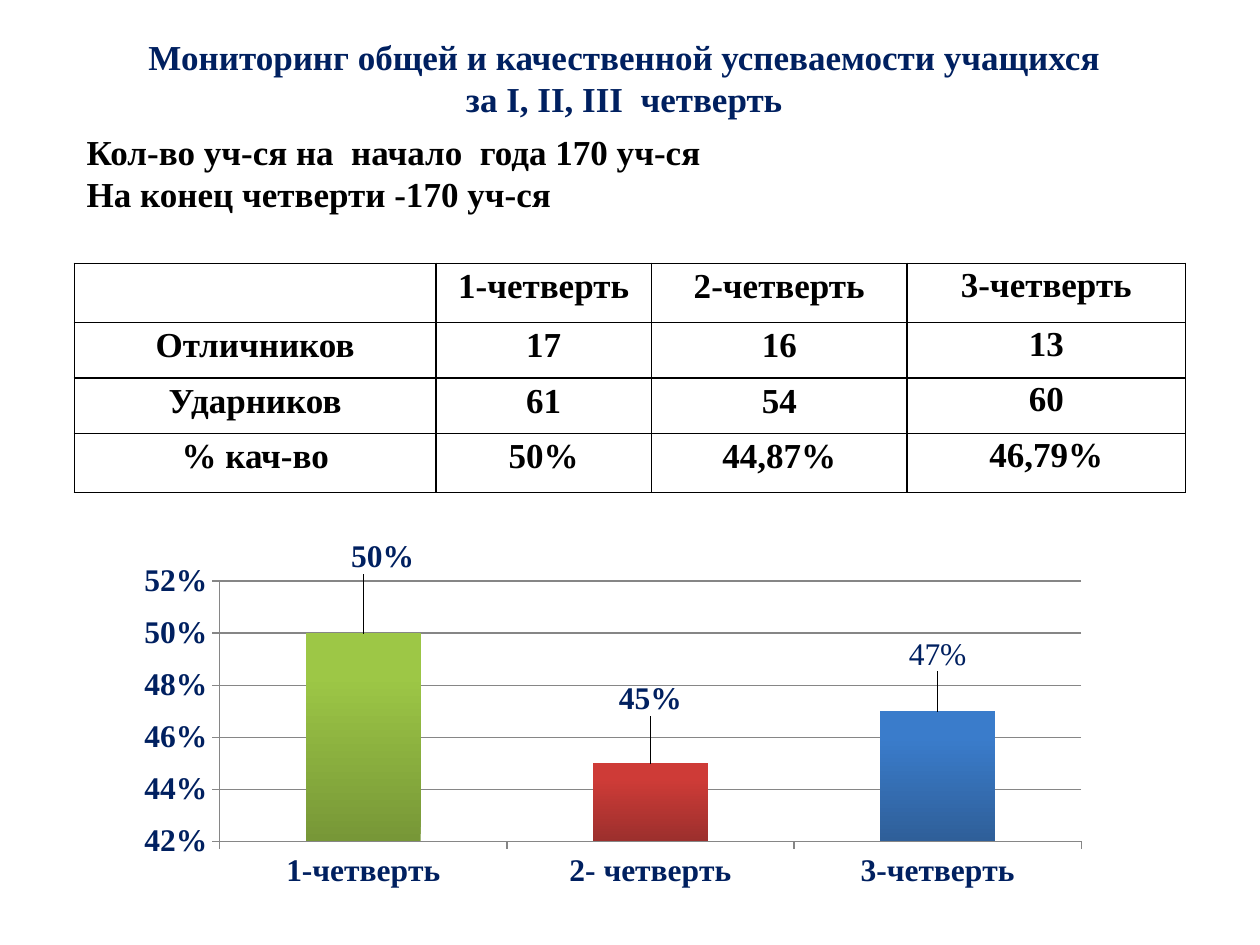
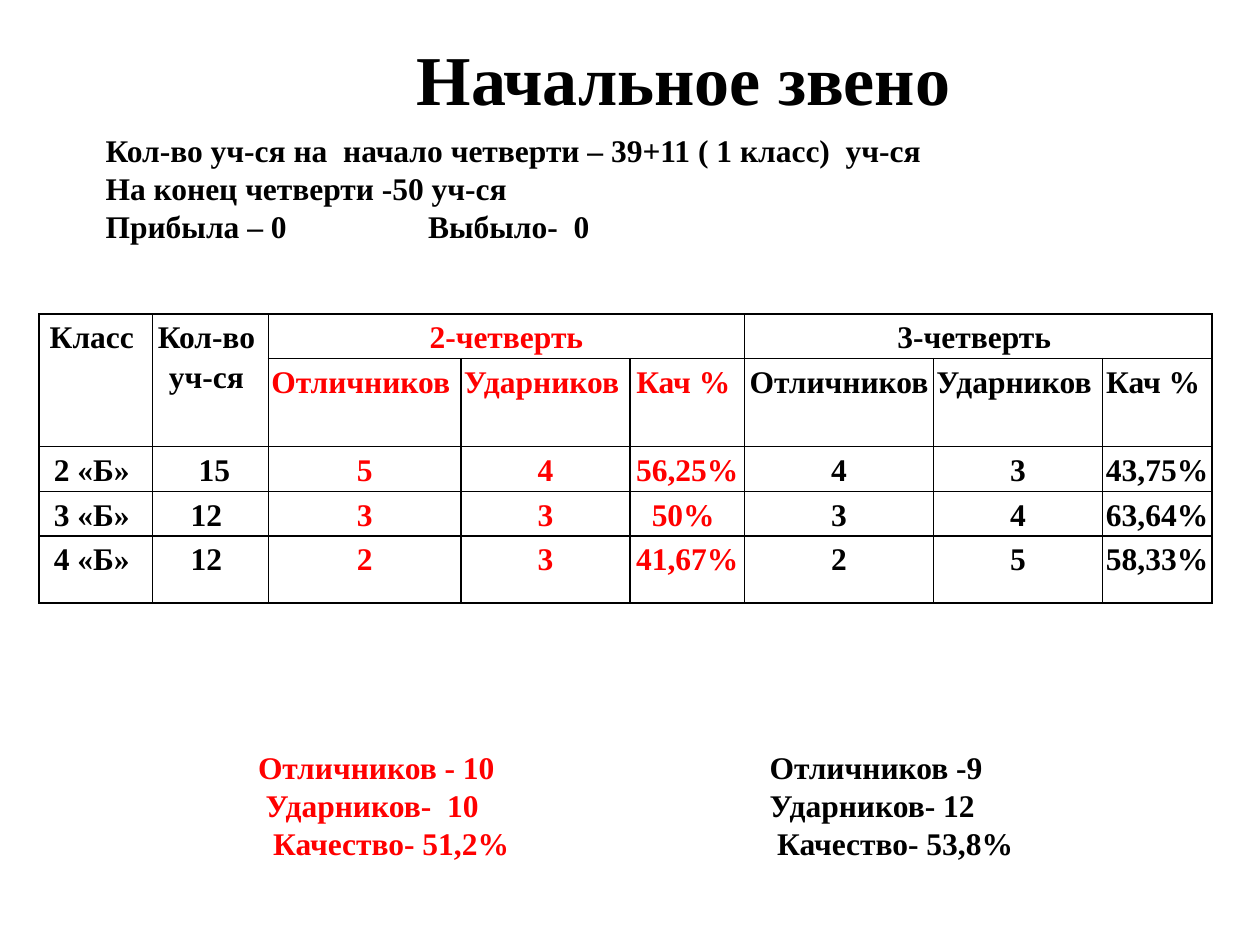
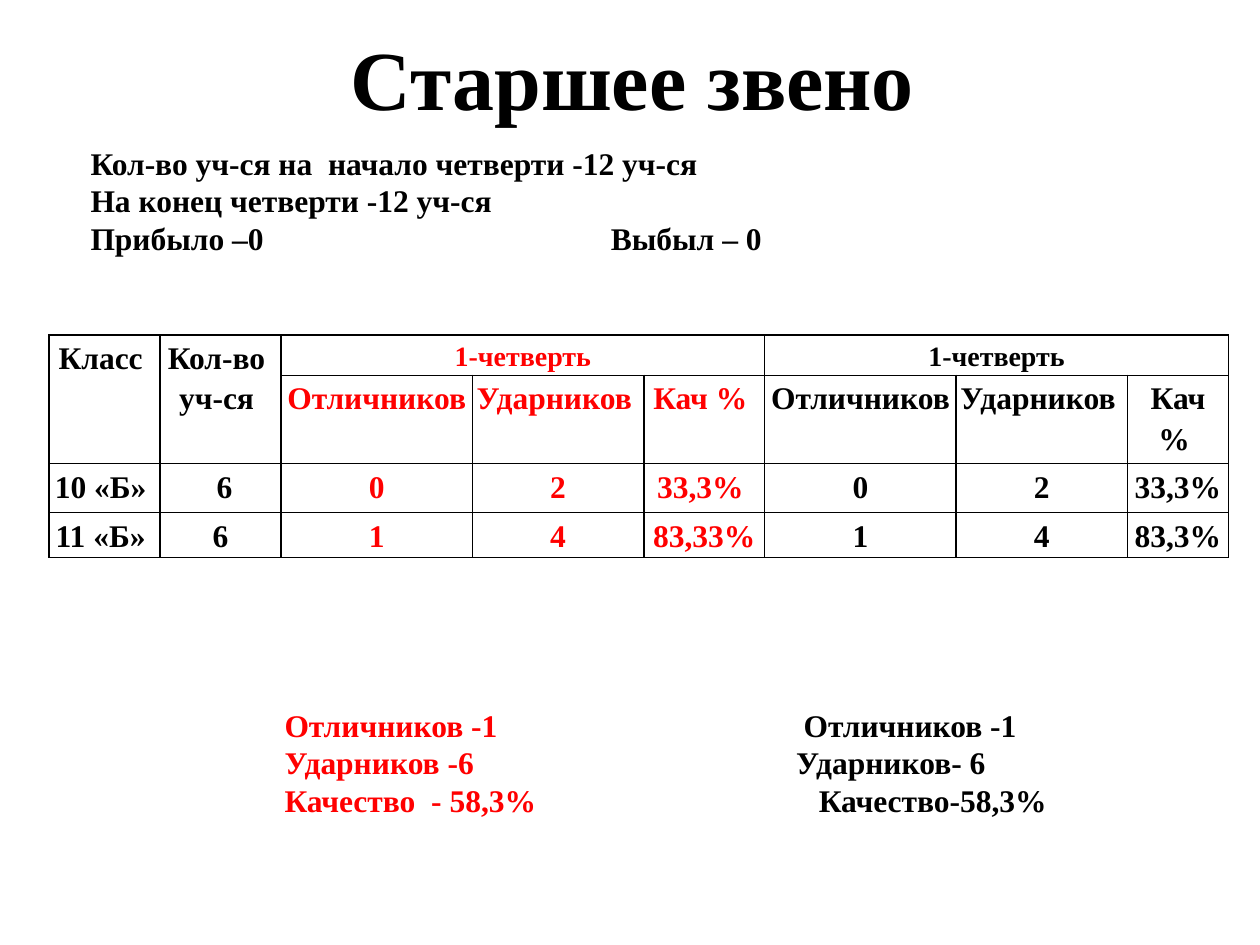
from dataclasses import dataclass

from lxml import etree
from pptx import Presentation
from pptx.chart.data import CategoryChartData
from pptx.dml.color import RGBColor
from pptx.enum.chart import XL_CHART_TYPE, XL_LABEL_POSITION, XL_TICK_MARK
from pptx.enum.text import PP_ALIGN
from pptx.oxml import parse_xml
from pptx.oxml.ns import nsdecls, qn
from pptx.util import Inches, Pt

CENTER, LEFT = PP_ALIGN.CENTER, PP_ALIGN.LEFT
COLUMNS = XL_CHART_TYPE.COLUMN_CLUSTERED
OUTSIDE_END = XL_LABEL_POSITION.OUTSIDE_END
TICK_OUTSIDE = XL_TICK_MARK.OUTSIDE


@dataclass(frozen=True)
class Theme:
    font: str = "Times New Roman"
    ink: str = "000000"
    navy: str = "002060"
    red: str = "FF0000"
    axis: str = "868686"
    small: int = 16
    body: int = 18
    large: int = 20


THEME = Theme()

# Content: monitoring slide
MONITORING = {
    "title": "Мониторинг общей и качественной успеваемости учащихся за Ӏ, II, III  четверть",
    "intro": ["Кол-во уч-ся на  начало  года 170 уч-ся",
              "На конец четверти -170 уч-ся"],
    "rows": [["", "1-четверть", "2-четверть", "3-четверть"],
             ["Отличников", "17", "16", "13"],
             ["Ударников", "61", "54", "60"],
             ["% кач-во", "50%", "44,87%", "46,79%"]],
}
# Quarter, quality, dark and light bar colours, label shift, bold label
QUALITY = [
    ("1-четверть", 0.50, "779737", "9DC746", (0.02, -0.14), True),
    ("2- четверть", 0.45, "9C2F2D", "CE3B37", (0, -0.11), True),
    ("3-четверть", 0.47, "2F5F99", "3A7CCB", (0, -0.09), False),
]

# Content: one slide for each school stage
# A tab in a line goes to the next of that line's tab stops (inches).
MEASURES = ["Отличников ", "Ударников ", "Кач % "]
STAGES = [
    {
        "title": "Начальное звено", "title_size": 40,
        "title_box": (1.56, 0.23, 7.73, 0.77),
        "intro_box": (0.74, 0.99, 8.67, 1.31),
        "intro": ["Кол-во уч-ся на  начало четверти – 39+11 ( 1 класс)  уч-ся",
                  "На конец четверти -50 уч-ся",
                  "Прибыла – 0\tВыбыло-  0"],
        "intro_stop": 2.56,
        "quarters": ("2-четверть", "3-четверть "), "quarter_size": THEME.body,
        "classes": [
            ["2 «Б» ", " 15", "5", "4", "56,25% ", "4", "3", "43,75% "],
            ["3 «Б» ", "12 ", "3", "3", "50% ", "3", "4", "63,64% "],
            ["4 «Б» ", "12 ", "2", "3", "41,67% ", "2", "5", "58,33% "]],
        "table_at": (0.31, 2.49), "inset": 0.02,
        "widths": [0.9, 0.92, 1.53, 1.34, 0.91, 1.5, 1.34, 0.87],
        "heights": [0.35, 0.7, 0.35, 0.35, 0.53],
        "totals_box": (0.57, 5.89, 9.06, 1.31),
        "totals": [("Отличников - 10", 1.38, "Отличников -9", 5.44),
                   ("Ударников-  10", 1.44, "Ударников- 12", 5.44),
                   ("Качество- 51,2%", 1.5, "Качество- 53,8%", 5.5)],
    },
    {
        "title": "Старшее звено", "title_size": 48,
        "title_box": (2.66, 0.16, 4.72, 0.91),
        "intro_box": (0.62, 1.09, 7.89, 1.31),
        "intro": ["Кол-во уч-ся на  начало четверти -12 уч-ся",
                  "На конец четверти -12 уч-ся",
                  "Прибыло –0\tВыбыл – 0"],
        "intro_stop": 4.13,
        "quarters": ("1-четверть", "1-четверть"), "quarter_size": THEME.small,
        "classes": [
            ["10 «Б» ", " 6", "0", "2", "33,3% ", "0", "2", "33,3% "],
            ["11 «Б» ", "6", "1", "4", "83,33%", "1", "4", "83,3%"]],
        "table_at": (0.39, 2.66), "inset": 0.03,
        "widths": [0.88, 0.96, 1.52, 1.36, 0.96, 1.52, 1.36, 0.8],
        "heights": [0.32, 0.7, 0.39, 0.35],
        "totals_box": (1.09, 5.55, 8.44, 1.31),
        "totals": [("Отличников -1", 1.07, "Отличников -1", 5.19),
                   ("Ударников -6", 1.07, "Ударников- 6", 5.13),
                   ("Качество  - 58,3%", 1.07, "Качество-58,3%", 5.31)],
    },
]


# Text helpers
def style_font(font, size, color, bold=True):
    font.name, font.size, font.bold = THEME.font, Pt(size), bold
    font.color.rgb = RGBColor.from_string(color)


def add_runs(paragraph, runs, size, align=LEFT, stops=()):
    """Fill a paragraph with (text, colour) runs and set its tab stops."""
    paragraph.alignment = align
    for text, color in runs:
        run = paragraph.add_run()
        run.text = text
        style_font(run.font, size, color)
    if stops:
        tabs = etree.SubElement(paragraph._p.get_or_add_pPr(), qn("a:tabLst"))
        for stop in stops:
            etree.SubElement(tabs, qn("a:tab"), pos=str(Inches(stop)), algn="l")


def add_text(slide, box, lines, size, align=LEFT):
    """Add a text box; each line is a pair of runs and tab stops."""
    frame = slide.shapes.add_textbox(*map(Inches, box)).text_frame
    frame.word_wrap = True
    for i, (runs, stops) in enumerate(lines):
        paragraph = frame.add_paragraph() if i else frame.paragraphs[0]
        add_runs(paragraph, runs, size, align, stops)


def plain(lines, color=THEME.ink, stop=None):
    return [([(line, color)], [stop] if "\t" in line else []) for line in lines]


# Table helpers
def add_grid(slide, at, widths, heights):
    """Add an unfilled table with thin black borders on every cell."""
    table = slide.shapes.add_table(
        len(heights), len(widths), *map(Inches, (*at, sum(widths), sum(heights)))).table
    table.first_row = table.horz_banding = False
    for column, width in zip(table.columns, widths):
        column.width = Inches(width)
    for row, height in zip(table.rows, heights):
        row.height = Inches(height)
        for cell in row.cells:
            cell.fill.background()
            properties = cell._tc.get_or_add_tcPr()
            for i, side in enumerate(("lnL", "lnR", "lnT", "lnB")):
                properties.insert(i, parse_xml(
                    f'<a:{side} {nsdecls("a")} w="{Pt(1)}"><a:solidFill>'
                    f'<a:srgbClr val="{THEME.ink}"/></a:solidFill></a:{side}>'))
    return table


def fill_cell(cell, text, size, inset, spacing, color=THEME.ink, after=0, top=0.01):
    cell.margin_left = cell.margin_right = Inches(inset)
    cell.margin_top, cell.margin_bottom = Inches(top), 0
    for i, line in enumerate(text.split("\n") if text else []):
        paragraph = cell.text_frame.add_paragraph() if i else cell.text_frame.paragraphs[0]
        paragraph.line_spacing, paragraph.space_after = spacing, Pt(after)
        add_runs(paragraph, [(line, color)], size, CENTER)


# Chart
def manual_layout(**values):
    parts = "".join(f'<c:{tag} val="{value}"/>' for tag, value in values.items())
    return parse_xml(f'<c:layout {nsdecls("c")}><c:manualLayout>{parts}'
                     '</c:manualLayout></c:layout>')


def add_quality_chart(slide, box):
    data = CategoryChartData(number_format="0%")
    data.categories = [quarter[0] for quarter in QUALITY]
    data.add_series("Series 1", [quarter[1] for quarter in QUALITY])
    chart = slide.shapes.add_chart(COLUMNS, *map(Inches, box), data).chart
    chart.has_legend = chart.has_title = False
    style_font(chart.font, THEME.body, THEME.navy)

    values = chart.value_axis
    values.minimum_scale, values.maximum_scale, values.major_unit = 0.42, 0.52, 0.02
    values.tick_labels.number_format = "0%"
    values.tick_labels.number_format_is_linked = False
    values.has_major_gridlines = True
    for axis in (values, chart.category_axis):
        axis.major_tick_mark = TICK_OUTSIDE
        style_font(axis.tick_labels.font, THEME.body, THEME.navy)
    for line in (values.format.line, chart.category_axis.format.line,
                 values.major_gridlines.format.line):
        line.color.rgb = RGBColor.from_string(THEME.axis)
        line.width = Pt(0.75)

    plot = chart.plots[0]
    plot.gap_width, plot.vary_by_categories = 150, False
    plot.has_data_labels = True
    plot.data_labels.show_value = True
    plot.data_labels.number_format = "0%"
    plot.data_labels.number_format_is_linked = False
    for i, (_, _, dark, light, _, bold) in enumerate(QUALITY):
        point = plot.series[0].points[i]
        fill = point.format.fill
        fill.gradient()
        fill.gradient_angle = 90
        for stop, color, position in zip(fill.gradient_stops, (dark, light), (0, 0.8)):
            stop.color.rgb = RGBColor.from_string(color)
            stop.position = position
        style_font(point.data_label.font, THEME.body, THEME.navy, bold)
        point.data_label.position = OUTSIDE_END

    # Plot area and label places
    for label, quarter in zip(chart.element.iter(qn("c:dLbl")), QUALITY):
        x, y = quarter[4]
        label.insert(1, manual_layout(x=x, y=y))
    plot_area = next(chart.element.iter(qn("c:plotArea")))
    for layout in plot_area.findall(qn("c:layout")):
        plot_area.remove(layout)
    plot_area.insert(0, manual_layout(layoutTarget="inner", xMode="edge", yMode="edge",
                                      x=0.1, y=0.155, w=0.895, h=0.68))


# Slides
def build_monitoring(slide):
    add_text(slide, (0.98, 0.23, 7.95, 0.77),
             plain([MONITORING["title"]], THEME.navy), THEME.large, CENTER)
    add_text(slide, (0.59, 0.99, 8.94, 1.09), plain(MONITORING["intro"]), THEME.large)
    add_quality_chart(slide, (0.98, 4.14, 7.64, 3.04))
    table = add_grid(slide, (0.59, 2.09), [2.87, 1.71, 2.03, 2.21],
                     [0.47, 0.44, 0.44, 0.47])
    for r, row in enumerate(MONITORING["rows"]):
        for c, text in enumerate(row):
            inset, top = (0, 0) if c == len(row) - 1 else (0.07, 0.01)
            fill_cell(table.cell(r, c), text, THEME.large, inset, 1.07, after=8, top=top)


def build_stage(slide, stage):
    add_text(slide, stage["title_box"], plain([stage["title"]]),
             stage["title_size"], CENTER)
    add_text(slide, stage["intro_box"],
             plain(stage["intro"], stop=stage["intro_stop"]), THEME.body)

    # Two quarters side by side, the earlier one in red
    table = add_grid(slide, stage["table_at"], stage["widths"], stage["heights"])
    earlier, later = stage["quarters"]
    rows = [["Класс ", "Кол-во \nуч-ся ", earlier, None, None, later, None, None],
            [None, None, *MEASURES, *MEASURES], *stage["classes"]]
    for c in (0, 1):
        table.cell(0, c).merge(table.cell(1, c))
    for c in (2, 5):
        table.cell(0, c).merge(table.cell(0, c + 2))
    for r, row in enumerate(rows):
        for c, text in enumerate(row):
            if text is not None:
                size = stage["quarter_size"] if r == 0 and c > 1 else THEME.body
                color = THEME.red if 2 <= c <= 4 else THEME.ink
                fill_cell(table.cell(r, c), text, size, stage["inset"], 1.15, color)

    totals = [([("\t" + before, THEME.red), ("\t" + after, THEME.ink)], (left, right))
              for before, left, after, right in stage["totals"]]
    add_text(slide, stage["totals_box"], totals, THEME.body)


def main():
    deck = Presentation()
    deck.slide_width, deck.slide_height = Inches(10), Inches(7.5)
    blank = deck.slide_layouts[6]
    build_monitoring(deck.slides.add_slide(blank))
    for stage in STAGES:
        build_stage(deck.slides.add_slide(blank), stage)
    deck.save("out.pptx")


if __name__ == "__main__":
    main()
